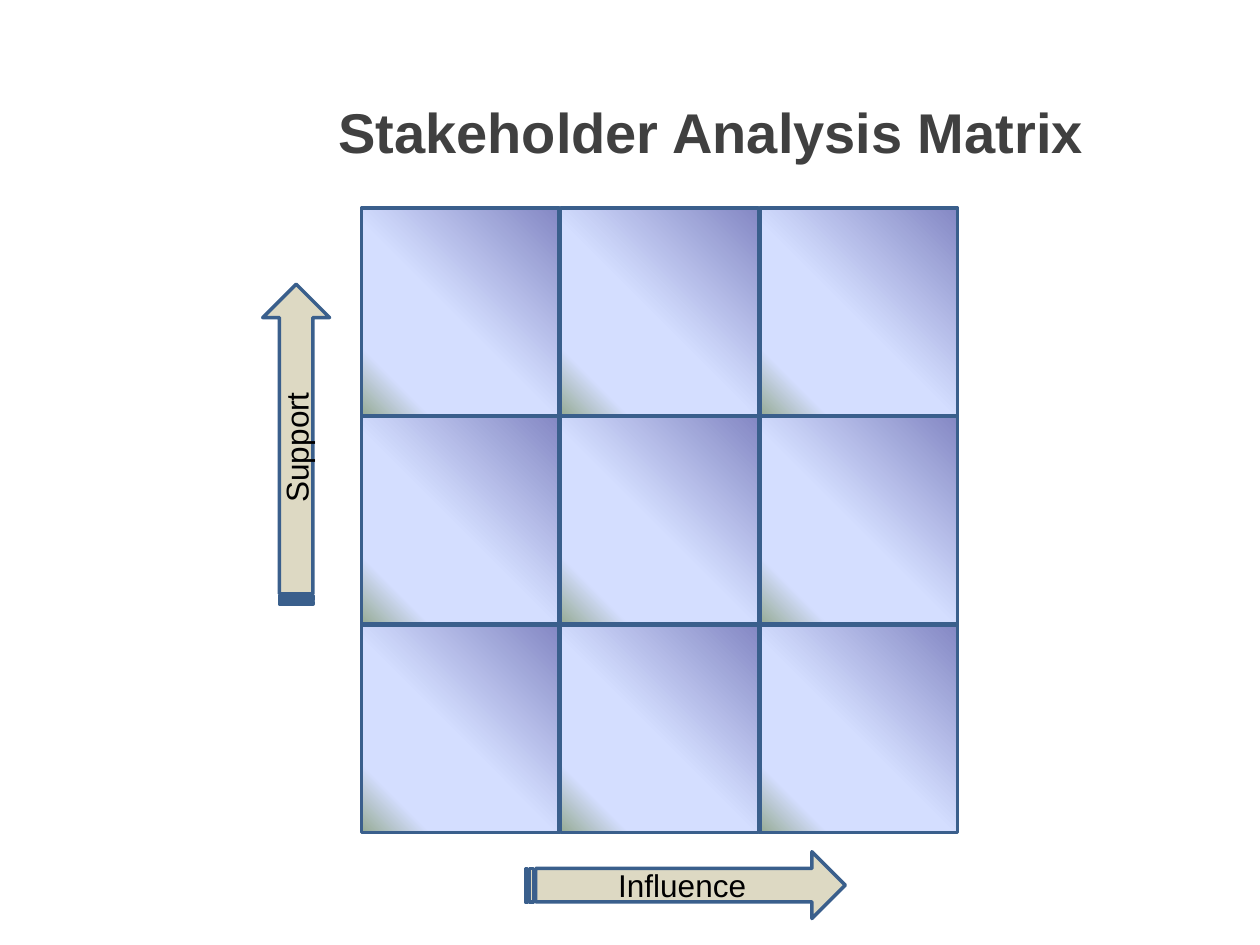
"""Build the stakeholder analysis matrix slide."""
from dataclasses import dataclass

import lxml.etree
import pptx
import pptx.dml.color
import pptx.enum.shapes
import pptx.enum.text
import pptx.oxml.ns
import pptx.util

Pt = pptx.util.Pt
SHAPE = pptx.enum.shapes.MSO_SHAPE
EDGE, ARROW_FILL = "3A5F8C", "DDD9C3"
STOPS = ((0, "8488C4"), (53, "D4DEFF"), (83, "D4DEFF"), (100, "96AB94"))
GRID_LEFT, GRID_TOP, PITCH_X, PITCH_Y = 206.6, 118.8, 113.8, 119.1
CELL_WIDTH, CELL_HEIGHT = 113, 118.8
ARROW_LENGTH, ARROW_BREADTH = 182.9, 38.2


@dataclass
class AxisArrow:
    label: str
    left: float
    top: float
    rotation: float = 0


ARROWS = (AxisArrow("Influence", 300.2, 486.7), AxisArrow("Support", 77.8, 234.7, 270))


def rgb(value: str) -> pptx.dml.color.RGBColor:
    return pptx.dml.color.RGBColor.from_string(value)


def write(sp, text: str, color: str, formats: dict) -> None:
    tf = sp.text_frame
    tf.word_wrap = True
    tf.auto_size = pptx.enum.text.MSO_AUTO_SIZE.NONE
    tf.vertical_anchor = pptx.enum.text.MSO_ANCHOR.MIDDLE
    p = tf.paragraphs[0]
    p.alignment = pptx.enum.text.PP_ALIGN.CENTER
    r = p.add_run()
    r.text = text
    r.font.color.rgb = rgb(color)
    for name, value in formats.items():
        setattr(r.font, name, value)


def add_outlined(s, kind, left: float, top: float, width: float, height: float):
    sp = s.shapes.add_shape(kind, Pt(left), Pt(top), Pt(width), Pt(height))
    sp.shadow.inherit = False
    sp.line.color.rgb = rgb(EDGE)
    sp.line.width = Pt(2)
    return sp


def fill_gradient(sp) -> None:
    qn = pptx.oxml.ns.qn
    sp.fill.gradient()
    sp.fill.gradient_angle = 225
    stops = sp.element.spPr.find(".//" + qn("a:gsLst"))
    for old in list(stops):
        stops.remove(old)
    for percent, color in STOPS:
        stop = lxml.etree.SubElement(stops, qn("a:gs"), pos=str(percent * 1000))
        lxml.etree.SubElement(stop, qn("a:srgbClr"), val=color)


def add_cell(s, row: int, column: int) -> None:
    left, top = GRID_LEFT + column * PITCH_X, GRID_TOP + row * PITCH_Y
    fill_gradient(add_outlined(s, SHAPE.RECTANGLE, left, top, CELL_WIDTH, CELL_HEIGHT))


def add_arrow(s, arrow: AxisArrow) -> None:
    sp = add_outlined(s, SHAPE.STRIPED_RIGHT_ARROW, arrow.left, arrow.top,
                      ARROW_LENGTH, ARROW_BREADTH)
    sp.rotation = arrow.rotation
    sp.fill.solid()
    sp.fill.fore_color.rgb = rgb(ARROW_FILL)
    write(sp, arrow.label, "000000", {"size": Pt(18), "name": "Arial"})


def add_title(s, text: str) -> None:
    sp = s.shapes.title
    box = {"left": 118.8, "top": 30.2, "width": 575.3, "height": 90}
    for name, value in box.items():
        setattr(sp, name, Pt(value))
    write(sp, text, "404040", {"size": Pt(32), "name": "Arial", "bold": True})


def main() -> None:
    prs = pptx.Presentation()
    prs.slide_width, prs.slide_height = Pt(720), Pt(540)
    s = prs.slides.add_slide(prs.slide_layouts[5])
    add_title(s, "Stakeholder Analysis Matrix")
    for arrow in ARROWS:
        add_arrow(s, arrow)
    for row in range(3):
        for column in range(3):
            add_cell(s, row, column)
    prs.save("out.pptx")


if __name__ == "__main__":
    main()
